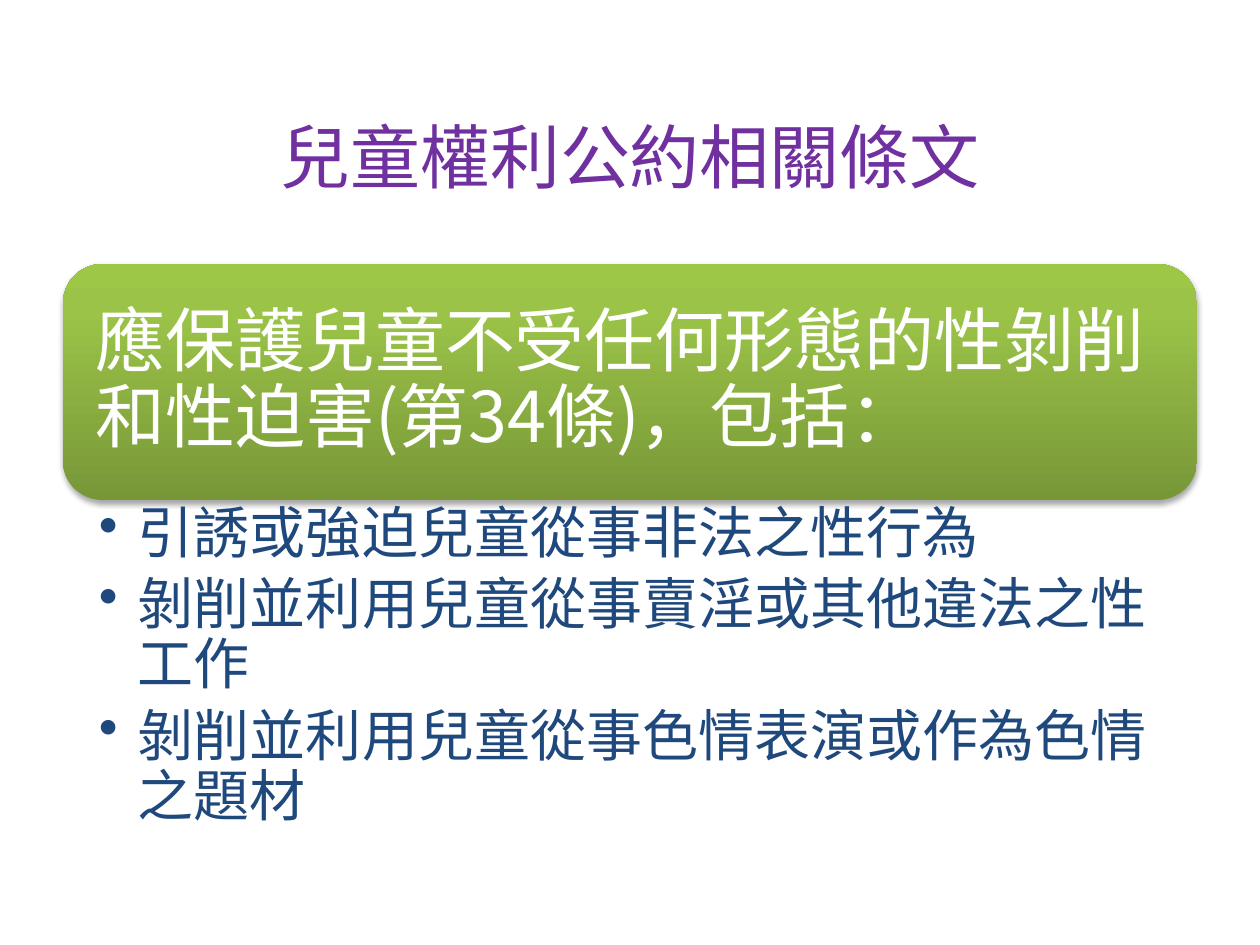
from lxml import etree
from pptx import Presentation
from pptx.dml.color import RGBColor
from pptx.enum.shapes import MSO_SHAPE
from pptx.enum.text import MSO_ANCHOR, PP_ALIGN
from pptx.oxml.ns import qn
from pptx.util import Emu, Pt

ROUND = MSO_SHAPE.ROUNDED_RECTANGLE
MIDDLE, TOP = MSO_ANCHOR.MIDDLE, MSO_ANCHOR.TOP
LEFT, CENTER = PP_ALIGN.LEFT, PP_ALIGN.CENTER
FONT = "Noto Sans CJK SC"
SCALE = 914400 / 126
PURPLE, WHITE, NAVY = "7030A0", "FFFFFF", "1F497D"
GREENS = [(0, "779737"), (80, "9BC348"), (100, "9DC746")]
POINTS = [
    "引誘或強迫兒童從事非法之性行為",
    "剝削並利用兒童從事賣淫或其他違法之性工作",
    "剝削並利用兒童從事色情表演或作為色情之題材",
]


def px(size):
    """Turn pixels into EMU."""
    return Emu(round(size * SCALE))


def color(code):
    """Turn a hex string into a colour."""
    return RGBColor.from_string(code)


def node(parent, tag, **attrs):
    """Append a drawing element to its parent."""
    return etree.SubElement(parent, qn(f"a:{tag}"), {k: str(v) for k, v in attrs.items()})


def setup(frame, anchor, sides, ends):
    """Set wrapping, anchor and insets of a text frame."""
    frame.word_wrap = True
    frame.vertical_anchor = anchor
    frame.margin_left, frame.margin_right = (px(side) for side in sides)
    frame.margin_top = frame.margin_bottom = px(ends)


def write(para, text, size, code, align=LEFT):
    """Add one run of styled text to a paragraph."""
    para.alignment = align
    run = para.add_run()
    run.text = text
    font = run.font
    font.size, font.name = Pt(size), FONT
    font.color.rgb = color(code)
    node(run._r.get_or_add_rPr(), "ea", typeface=FONT)


def heading(slide, box):
    """Place the slide title."""
    title = slide.shapes.title
    title.left, title.top, title.width, title.height = map(px, box)
    frame = title.text_frame
    setup(frame, MIDDLE, (13, 13), 6)
    write(frame.paragraphs[0], "兒童權利公約相關條文", 40, PURPLE, CENTER)


def banner(slide, box):
    """Draw the shaded green banner with its statement."""
    shape = slide.shapes.add_shape(ROUND, *map(px, box))
    shape.line.fill.background()
    shape.fill.gradient()
    shape.fill.gradient_angle = 90
    props = shape._element.spPr
    stops = props.find(f".//{qn('a:gsLst')}")
    stops.clear()
    for pos, code in GREENS:
        node(node(stops, "gs", pos=pos * 1000), "srgbClr", val=code)
    shape.shadow.inherit = False
    shade = node(props.find(qn("a:effectLst")), "outerShdw", blurRad=Pt(3.1),
                 dist=Pt(1.8), dir=5400000, rotWithShape=0)
    node(node(shade, "srgbClr", val="000000"), "alpha", val=35000)
    frame = shape.text_frame
    setup(frame, MIDDLE, (21, 21), 21)
    para = frame.paragraphs[0]
    para.line_spacing = 0.9
    write(para, "應保護兒童不受任何形態的性剝削和性迫害(第34條)，包括：", 40, WHITE)


def bullets(slide, box):
    """List the points below the banner."""
    frame = slide.shapes.add_textbox(*map(px, box)).text_frame
    setup(frame, TOP, (36, 32), 5)
    for i, text in enumerate(POINTS):
        para = frame.add_paragraph() if i else frame.paragraphs[0]
        para.line_spacing, para.space_after = 0.9, Pt(6)
        props = para._p.get_or_add_pPr()
        props.set("marL", str(px(39)))
        props.set("indent", str(-px(39)))
        node(props, "buChar", char="•")
        write(para, text, 32, NAVY)


def main():
    """Build and save the slide."""
    deck = Presentation()
    deck.slide_width, deck.slide_height = px(1260), px(945)
    slide = deck.slides.add_slide(deck.slide_layouts[5])
    heading(slide, (63, 77, 1134, 157))
    banner(slide, (63, 264, 1134, 236))
    bullets(slide, (63, 500, 1134, 370))
    deck.save("out.pptx")


if __name__ == "__main__":
    main()
